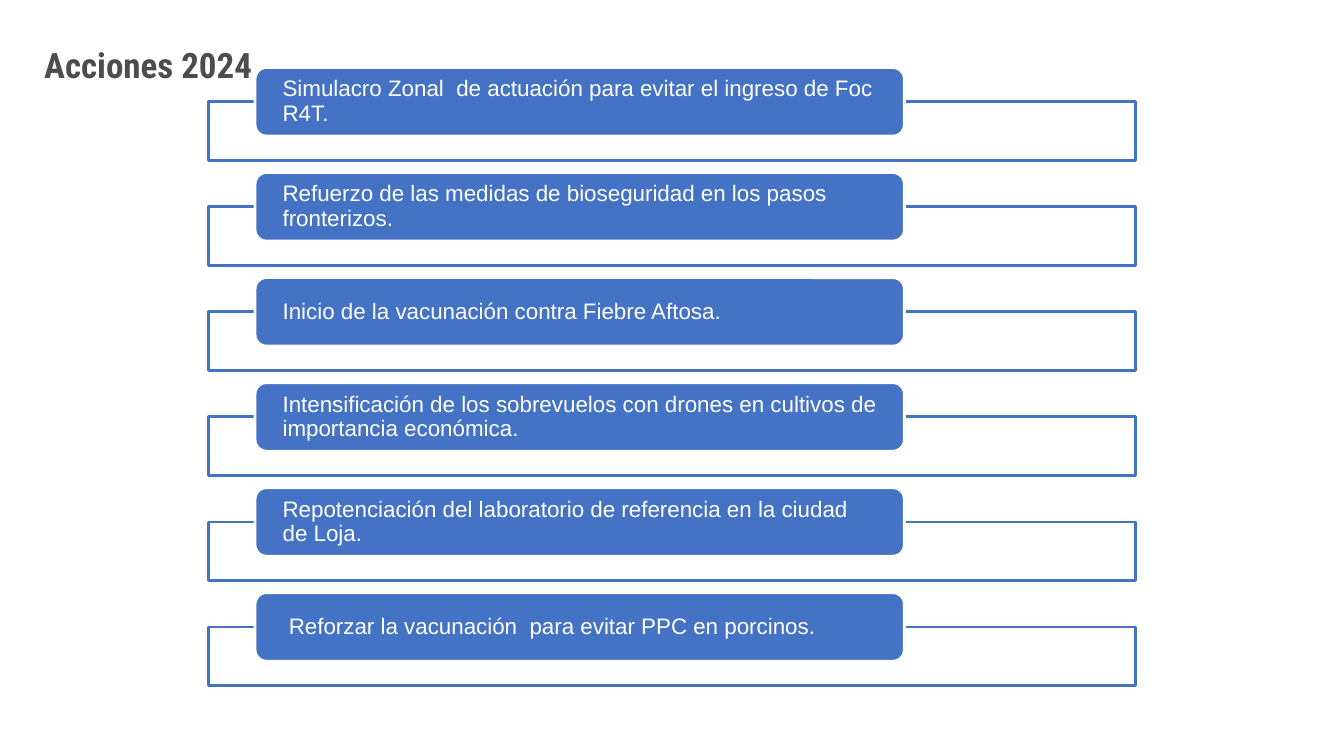
from dataclasses import dataclass

from lxml import etree
from pptx import Presentation
from pptx import util as u
from pptx.dml.color import RGBColor
from pptx.enum import shapes, text
from pptx.oxml import ns


@dataclass(frozen=True)
class Theme:
    blue: RGBColor = RGBColor(0x44, 0x72, 0xC4)
    white: RGBColor = RGBColor(0xFF, 0xFF, 0xFF)
    gray: RGBColor = RGBColor(0x4D, 0x4D, 0x4D)
    title_font: str = "Roboto Condensed"
    body_font: str = "Arial"
    title_size: int = 25
    body_size: int = 16
    line_width: int = 2
    frame_opacity: int = 90


@dataclass(frozen=True)
class Area:
    left: float
    top: float
    width: float
    height: float

    def lengths(self) -> list:
        return [u.Inches(n) for n in (self.left, self.top, self.width, self.height)]


@dataclass(frozen=True)
class Action:
    wording: str
    top: float


THEME = Theme()
FIRST_TOP, ROW_STEP = 0.67, 1.042
FRAME_DROP = 0.34
WORDINGS = (
    "Simulacro Zonal  de actuación para evitar el ingreso de Foc R4T.",
    "Refuerzo de las medidas de bioseguridad en los pasos fronterizos.",
    "Inicio de la vacunación contra Fiebre Aftosa.",
    "Intensificación de los sobrevuelos con drones en cultivos de importancia económica.",
    "Repotenciación del laboratorio de referencia en la ciudad de Loja.",
    " Reforzar la vacunación  para evitar PPC en porcinos.",
)
ACTIONS = [Action(wording, FIRST_TOP + row * ROW_STEP) for row, wording in enumerate(WORDINGS)]


def apply_format(target, values: dict) -> None:
    for name, value in values.items():
        setattr(target, name, value)


def write(shape, wording: str, frame_format: dict, para_format: dict,
          font_format: dict, color: RGBColor) -> None:
    apply_format(shape.text_frame, frame_format)
    para = shape.text_frame.paragraphs[0]
    apply_format(para, para_format)
    span = para.add_run()
    span.text = wording
    apply_format(span.font, font_format)
    span.font.color.rgb = color


def add_panel(page, kind, area: Area, fill: RGBColor, line: RGBColor):
    panel = page.shapes.add_shape(kind, *area.lengths())
    panel.shadow.inherit = False
    panel.fill.solid()
    panel.fill.fore_color.rgb = fill
    panel.line.color.rgb = line
    panel.line.width = u.Pt(THEME.line_width)
    return panel


def set_opacity(shape, percent: int) -> None:
    color = shape.fill._xPr.find(ns.qn("a:solidFill")).find(ns.qn("a:srgbClr"))
    etree.SubElement(color, ns.qn("a:alpha"), val=str(percent * 1000))


def add_title(page) -> None:
    title = page.shapes.add_textbox(*Area(0.34, 0.38, 5.77, 0.52).lengths())
    write(title, "Acciones 2024",
          {"word_wrap": True, "auto_size": text.MSO_AUTO_SIZE.SHAPE_TO_FIT_TEXT}, {},
          {"name": THEME.title_font, "size": u.Pt(THEME.title_size), "bold": True},
          THEME.gray)


def add_action(page, action: Action) -> None:
    """Draw the outlined frame with the labelled bar over its upper edge."""
    frame = add_panel(page, shapes.MSO_SHAPE.RECTANGLE,
                      Area(2.07, action.top + FRAME_DROP, 9.19, 0.58), THEME.white, THEME.blue)
    set_opacity(frame, THEME.frame_opacity)
    bar = add_panel(page, shapes.MSO_SHAPE.ROUNDED_RECTANGLE,
                    Area(2.53, action.top, 6.44, 0.68), THEME.blue, THEME.white)
    write(bar, action.wording,
          {"word_wrap": True, "vertical_anchor": text.MSO_ANCHOR.MIDDLE,
           "margin_left": u.Inches(0.24), "margin_right": u.Inches(0.24),
           "margin_top": 0, "margin_bottom": 0},
          {"alignment": text.PP_ALIGN.LEFT, "line_spacing": 0.9},
          {"name": THEME.body_font, "size": u.Pt(THEME.body_size)},
          THEME.white)


def main() -> None:
    deck = Presentation()
    deck.slide_width, deck.slide_height = u.Inches(13.33), u.Inches(7.5)
    page = deck.slides.add_slide(deck.slide_layouts[6])
    add_title(page)
    for action in ACTIONS:
        add_action(page, action)
    deck.save("out.pptx")


if __name__ == "__main__":
    main()
